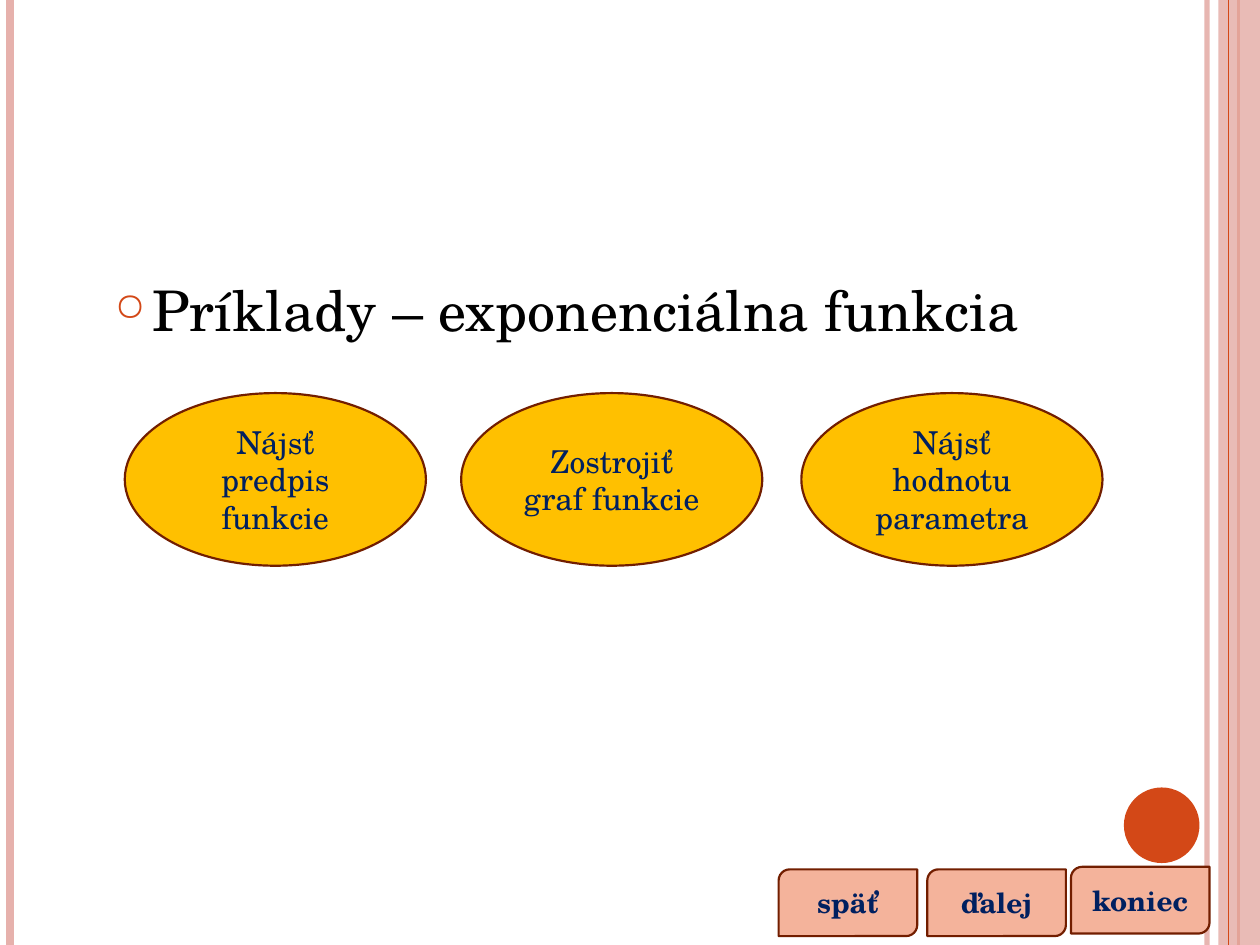
from dataclasses import dataclass

from lxml.etree import SubElement
from pptx import Presentation
from pptx.dml.color import RGBColor
from pptx.enum.shapes import MSO_CONNECTOR, MSO_SHAPE
from pptx.enum.text import MSO_ANCHOR, PP_ALIGN
from pptx.oxml.ns import qn
from pptx.util import Inches, Pt

FONT = "TeX Gyre Schola"
COLORS = {
    "rose": "E6B1AC", "orange": "D34817", "gold": "FFC000", "salmon": "F4B39B",
    "outline": "721E00", "navy": "002060", "black": "000000",
}
# Grid of 100 columns by 75 rows over the slide
COLUMNS, ROWS = 100, 75
WIDTH, HEIGHT = Inches(10), Inches(7.5)


@dataclass
class Area:
    column: float
    row: float
    columns: float
    rows: float

    def lengths(self) -> tuple:
        return (round(self.column * WIDTH / COLUMNS), round(self.row * HEIGHT / ROWS),
                round(self.columns * WIDTH / COLUMNS), round(self.rows * HEIGHT / ROWS))


@dataclass
class Rail:
    column: float
    color: str
    weight: float
    opacity: int = 100


@dataclass
class Label:
    text: str
    column: float
    row: float


RAILS = [Rail(95.8, "rose", 3, 93), Rail(0.8, "rose", 4.5), Rail(98.3, "orange", 1.5)]
INNER_RAIL = Rail(97.5, "orange", 0.75)
TOPICS = [
    Label("Nájsť predpis funkcie", 9.9, 31.2),
    Label("Zostrojiť graf funkcie", 36.6, 31.2),
    Label("Nájsť hodnotu parametra", 63.6, 31.2),
]
BUTTONS = [Label("späť", 61.8, 69), Label("ďalej", 73.6, 69), Label("koniec", 85, 68.8)]


def rgb(name: str) -> RGBColor:
    return RGBColor.from_string(COLORS[name])


def set_opacity(element, percent: int) -> None:
    for color in element.iter(qn("a:srgbClr")):
        SubElement(color, qn("a:alpha")).set("val", str(percent * 1000))


def write(frame, text: str, *, size: float, color: str, bold: bool = False,
          align=PP_ALIGN.CENTER) -> None:
    frame.word_wrap = True
    frame.vertical_anchor = MSO_ANCHOR.MIDDLE
    para = frame.paragraphs[0]
    para.alignment = align
    span = para.add_run()
    span.text = text
    span.font.name, span.font.size, span.font.bold = FONT, Pt(size), bold
    span.font.color.rgb = rgb(color)


def add_bullet(para, character: str, *, color: str, percent: int, indent) -> None:
    properties = para._p.get_or_add_pPr()
    properties.set("marL", str(indent))
    properties.set("indent", str(-indent))
    bullet_color = SubElement(properties, qn("a:buClr"))
    SubElement(bullet_color, qn("a:srgbClr")).set("val", COLORS[color])
    SubElement(properties, qn("a:buSzPct")).set("val", str(percent * 1000))
    SubElement(properties, qn("a:buChar")).set("char", character)


def add_rail(page, rail: Rail) -> None:
    left = round(rail.column * WIDTH / COLUMNS)
    line = page.shapes.add_connector(MSO_CONNECTOR.STRAIGHT, left, 0, left, HEIGHT)
    line.line.color.rgb, line.line.width = rgb(rail.color), Pt(rail.weight)
    if rail.opacity < 100:
        set_opacity(line._element.spPr, rail.opacity)
    SubElement(line._element.spPr, qn("a:effectLst"))


def add_box(page, kind, area: Area, fill: str, outline: str = ""):
    box = page.shapes.add_shape(kind, *area.lengths())
    box.shadow.inherit = False
    box.fill.solid()
    box.fill.fore_color.rgb = rgb(fill)
    if outline:
        box.line.color.rgb, box.line.width = rgb(outline), Pt(1.25)
    else:
        box.line.fill.background()
    return box


def main() -> None:
    deck = Presentation()
    deck.slide_width, deck.slide_height = WIDTH, HEIGHT
    page = deck.slides.add_slide(deck.slide_layouts[5])

    # Edge decoration
    for rail in RAILS:
        add_rail(page, rail)
    band = add_box(page, MSO_SHAPE.RECTANGLE, Area(96.7, 0, 3.3, ROWS), "rose")
    set_opacity(band._element.spPr, 87)
    add_rail(page, INNER_RAIL)
    add_box(page, MSO_SHAPE.OVAL, Area(89.2, 62.5, 6, 6), "orange")

    # Title
    title = page.shapes.title
    title.left, title.top, title.width, title.height = Area(8.1, 20.5, 81.7, 8).lengths()
    add_bullet(title.text_frame.paragraphs[0], "○", color="orange", percent=70,
               indent=Inches(0.3))
    write(title.text_frame, "Príklady – exponenciálna funkcia", size=32, color="black",
          align=PP_ALIGN.LEFT)

    # Topics
    for topic in TOPICS:
        oval = add_box(page, MSO_SHAPE.OVAL, Area(topic.column, topic.row, 23.9, 13.7),
                       "gold", "outline")
        write(oval.text_frame, topic.text, size=18, color="navy")

    # Navigation buttons
    for button in BUTTONS:
        box = add_box(page, MSO_SHAPE.ROUND_2_DIAG_RECTANGLE,
                      Area(button.column, button.row, 11, 5.3), "salmon", "outline")
        write(box.text_frame, button.text, size=16, color="navy", bold=True)

    deck.save("out.pptx")


if __name__ == "__main__":
    main()
